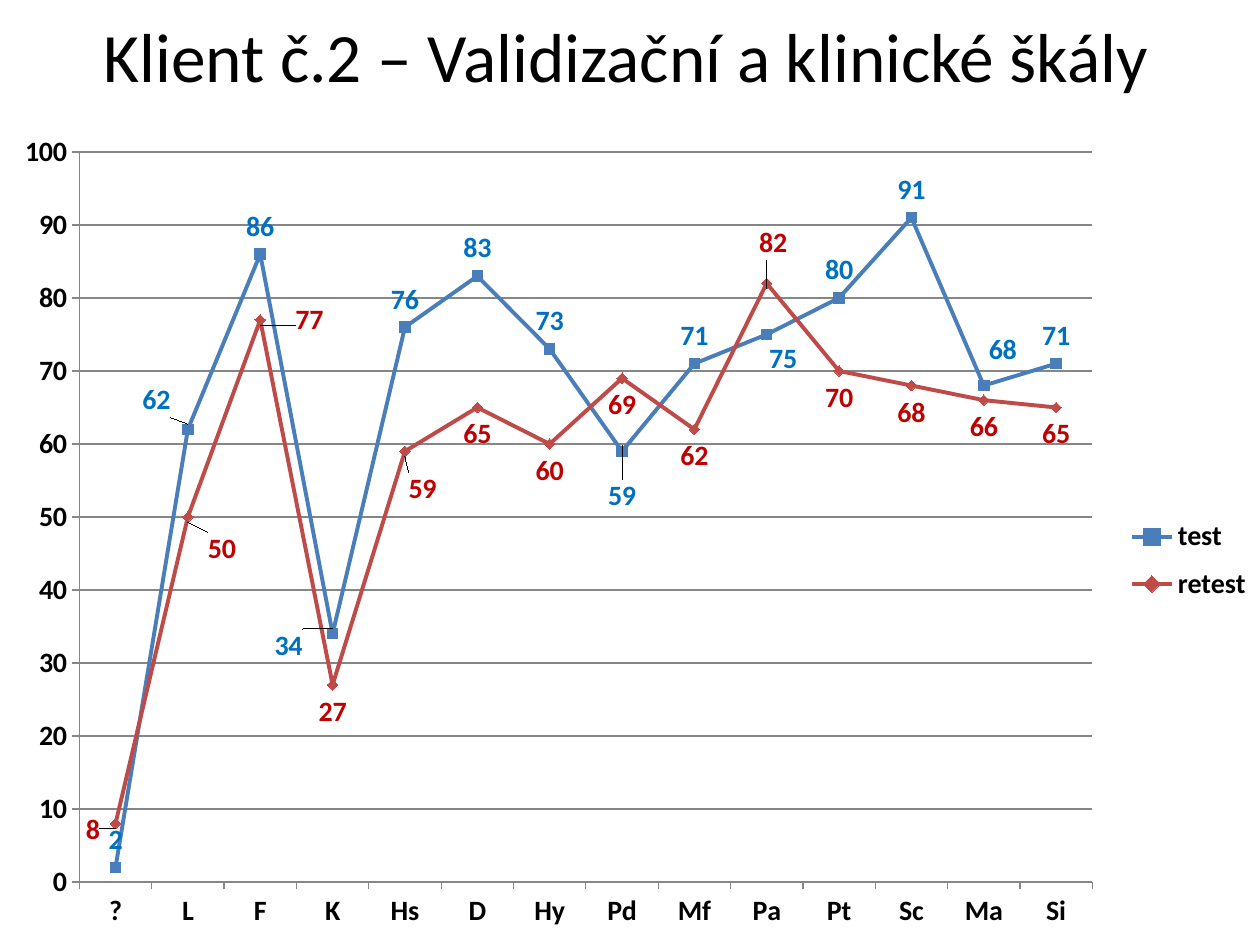
from pptx import Presentation
from pptx.chart.data import CategoryChartData
from pptx.dml.color import RGBColor
from pptx.enum.chart import (XL_CHART_TYPE, XL_LABEL_POSITION, XL_LEGEND_POSITION,
                             XL_MARKER_STYLE, XL_TICK_MARK)
from pptx.enum.text import MSO_ANCHOR, PP_ALIGN
from pptx.oxml import parse_xml
from pptx.oxml.ns import nsdecls, qn
from pptx.util import Inches, Pt

BLACK = RGBColor(0x00, 0x00, 0x00)
GREY = RGBColor(0x86, 0x86, 0x86)
BLUE = RGBColor(0x4F, 0x81, 0xBD)
RED = RGBColor(0xC0, 0x50, 0x4D)
BLUE_LINE = RGBColor(0x4A, 0x7E, 0xBB)
RED_LINE = RGBColor(0xBE, 0x4B, 0x48)
BLUE_TEXT = RGBColor(0x00, 0x70, 0xC0)
RED_TEXT = RGBColor(0xC0, 0x00, 0x00)

SCALES = ["?", "L", "F", "K", "Hs", "D", "Hy", "Pd", "Mf", "Pa", "Pt", "Sc", "Ma", "Si"]
# shifts: point index -> label offset in percent of the chart's width and height
SERIES = [
    dict(name="test", vals=[2, 62, 86, 34, 76, 83, 73, 59, 71, 75, 80, 91, 68, 71],
         fill=BLUE, line=BLUE_LINE, text=BLUE_TEXT,
         mark=XL_MARKER_STYLE.SQUARE, pos=XL_LABEL_POSITION.ABOVE,
         shifts={1: (-2.5, -0.2), 3: (-3.5, 4.8), 7: (0, 8.8),
                 9: (1.3, 6.3), 12: (1.5, -1)}),
    dict(name="retest", vals=[8, 50, 77, 27, 59, 65, 60, 69, 62, 82, 70, 68, 66, 65],
         fill=RED, line=RED_LINE, text=RED_TEXT,
         mark=XL_MARKER_STYLE.DIAMOND, pos=XL_LABEL_POSITION.BELOW,
         shifts={0: (-1.8, -2.5), 1: (2.7, 0.6), 2: (3.9, -3.3),
                 4: (1.4, 1.3), 9: (0.5, -8.2)}),
]


def layout(inner=False, edge=True, **spots):
    """Make a manual chart layout from percentages x, y, w, h."""
    tags = '<c:layoutTarget val="inner"/>' if inner else ""
    if edge:
        tags += '<c:xMode val="edge"/><c:yMode val="edge"/>'
    tags += "".join(f'<c:{key} val="{val / 100:.3f}"/>' for key, val in spots.items())
    return parse_xml(f"<c:layout {nsdecls('c')}><c:manualLayout>{tags}"
                     "</c:manualLayout></c:layout>")


def place(node, after, new):
    """Put a layout behind the named child, or first, in place of any old one."""
    for old in node.findall(qn("c:layout")):
        node.remove(old)
    lead = node.find(qn(after)) if after else None
    if lead is None:
        node.insert(0, new)
    else:
        lead.addnext(new)


class Deck:
    face = "Calibri"
    label = dict(size=Pt(16), bold=True)

    def __init__(self):
        self.prs = Presentation()
        self.prs.slide_width, self.prs.slide_height = Inches(10), Inches(7.5)
        self.slide = self.prs.slides.add_slide(self.prs.slide_layouts[5])

    def box(self, x, y, w, h):
        """Turn shares of the slide into lengths."""
        wide, high = self.prs.slide_width, self.prs.slide_height
        return int(x * wide), int(y * high), int(w * wide), int(h * high)

    def style(self, font, color=BLACK, **form):
        for key, val in dict(name=self.face, **form).items():
            setattr(font, key, val)
        font.color.rgb = color

    def stroke(self, line, color, width):
        line.color.rgb = color
        line.width = Pt(width)

    def title(self, text, *spot):
        shape = self.slide.shapes.title
        shape.left, shape.top, shape.width, shape.height = self.box(*spot)
        frame = shape.text_frame
        frame.text = text
        frame.vertical_anchor = MSO_ANCHOR.MIDDLE
        para = frame.paragraphs[0]
        para.alignment = PP_ALIGN.CENTER
        self.style(para.runs[0].font, size=Pt(39.6))

    def chart(self, *spot):
        data = CategoryChartData()
        data.categories = SCALES
        for row in SERIES:
            data.add_series(row["name"], row["vals"])
        chart = self.slide.shapes.add_chart(
            XL_CHART_TYPE.LINE_MARKERS, *self.box(*spot), data).chart
        chart.has_title = False
        self.style(chart.font, size=Pt(10))
        self.axes(chart)
        self.legend(chart)
        plot = chart.plots[0]
        plot.vary_by_categories = False
        for series, row in zip(plot.series, SERIES):
            self.series(series, row)
        area = chart.element.find(".//" + qn("c:plotArea"))
        place(area, None, layout(True, x=6.3, y=4.1, w=80.4, h=88.3))

    def axes(self, chart):
        value = chart.value_axis
        form = dict(minimum_scale=0, maximum_scale=100, major_unit=10,
                    has_major_gridlines=True)
        for key, val in form.items():
            setattr(value, key, val)
        self.stroke(value.major_gridlines.format.line, GREY, 0.75)
        for axis in (chart.category_axis, value):
            axis.major_tick_mark = XL_TICK_MARK.OUTSIDE
            self.stroke(axis.format.line, GREY, 0.75)
            self.style(axis.tick_labels.font, **self.label)

    def legend(self, chart):
        chart.has_legend = True
        legend = chart.legend
        legend.position = XL_LEGEND_POSITION.RIGHT
        legend.include_in_layout = False
        self.style(legend.font, **self.label)
        place(legend._element, "c:legendPos", layout(x=89, y=47, w=10.7, h=13))

    def series(self, series, row):
        series.smooth = False
        self.stroke(series.format.line, row["line"], 2.25)
        mark = series.marker
        mark.style, mark.size = row["mark"], 6
        mark.format.fill.solid()
        mark.format.fill.fore_color.rgb = row["fill"]
        self.stroke(mark.format.line, row["line"], 0.75)
        labels = series.data_labels
        labels.show_value = True
        labels.position = row["pos"]
        self.style(labels.font, row["text"], **self.label)
        for spot, (x, y) in row["shifts"].items():
            label = series.points[spot].data_label
            self.style(label.font, row["text"], **self.label)
            label.position = row["pos"]
            node = labels._element.find(f"{qn('c:dLbl')}[{qn('c:idx')}][last()]")
            for item in labels._element.findall(qn("c:dLbl")):
                if item.find(qn("c:idx")).get("val") == str(spot):
                    node = item
            place(node, "c:idx", layout(edge=False, x=x, y=y))


def main():
    deck = Deck()
    deck.title("Klient č.2 – Validizační a klinické škály", 0.047, 0, 0.9, 0.115)
    deck.chart(0, 0.125, 1, 0.875)
    deck.prs.save("out.pptx")


if __name__ == "__main__":
    main()
